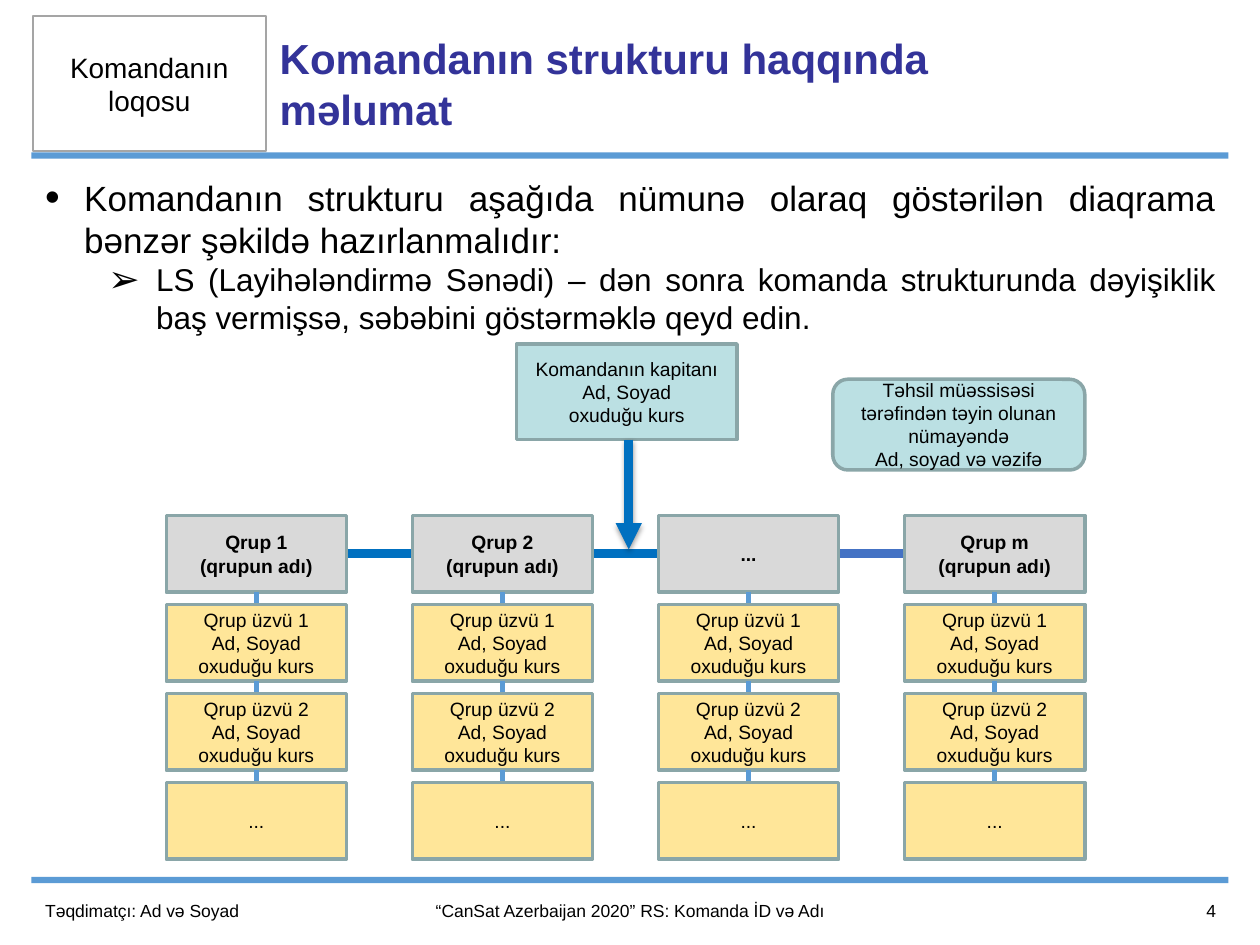
import dataclasses

import lxml.etree
import pptx
import pptx.dml.color
import pptx.enum.shapes
import pptx.enum.text
import pptx.oxml.ns
import pptx.util

# The slide is a grid of 100 columns by 75 rows
COLUMNS, ROWS, CELL = 100, 75, pptx.util.Inches(0.1)

ALIGN = pptx.enum.text.PP_ALIGN
ANCHOR = pptx.enum.text.MSO_ANCHOR
PRESET = pptx.enum.shapes.MSO_SHAPE

BLACK, WHITE, RULE_BLUE = "000000", "FFFFFF", "5B9BD5"
TITLE_BLUE, ARROW_BLUE, LAST_LINK_BLUE = "333399", "0070C0", "4472C4"
LEADER_FILL, GROUP_FILL, MEMBER_FILL = "BBE0E3", "D9D9D9", "FFE699"
CARD_EDGE, LOGO_EDGE = "8AA6A8", "A5A5A5"

NAME_LINES = ["Ad, Soyad", "oxuduğu kurs"]
MEMBERS = [["Qrup üzvü 1", *NAME_LINES], ["Qrup üzvü 2", *NAME_LINES], ["..."]]
GROUPS = [["Qrup 1", "(qrupun adı)"], ["Qrup 2", "(qrupun adı)"], ["..."],
          ["Qrup m", "(qrupun adı)"]]


@dataclasses.dataclass
class Box:
    left: float
    top: float
    width: float
    height: float

    def inner(self, left, top, width, height):
        return Box(self.left + left, self.top + top, width, height)

    def lengths(self):
        return [cells(v) for v in (self.left, self.top, self.width, self.height)]


def cells(count):
    return int(count * CELL)


def color(hex_string):
    return pptx.dml.color.RGBColor.from_string(hex_string)


def apply_format(target, values):
    for name, value in values.items():
        setattr(target, name, value)


def add_xml(parent, tag, **attributes):
    return lxml.etree.SubElement(parent, pptx.oxml.ns.qn(tag), attributes)


def write(frame, lines, size, align=ALIGN.CENTER, bold=False, ink=BLACK):
    apply_format(frame, {"word_wrap": True, "vertical_anchor": ANCHOR.MIDDLE,
                         "auto_size": pptx.enum.text.MSO_AUTO_SIZE.NONE})
    frame.text = "\n".join(lines)
    for paragraph in frame.paragraphs:
        paragraph.alignment = align
        apply_format(paragraph.font, {"name": "Arial", "size": pptx.util.Pt(size),
                                      "bold": bold})
        paragraph.font.color.rgb = color(ink)


def add_panel(slide, box, fill, edge=None, edge_width=2, preset=PRESET.RECTANGLE):
    panel = slide.shapes.add_shape(preset, *box.lengths())
    panel.shadow.inherit = False
    panel.fill.solid()
    panel.fill.fore_color.rgb = color(fill)
    if edge:
        panel.line.color.rgb = color(edge)
        panel.line.width = pptx.util.Pt(edge_width)
    else:
        panel.line.fill.background()
    return panel


def add_card(slide, box, lines, fill, bold=False, preset=PRESET.RECTANGLE):
    card = add_panel(slide, box, fill, CARD_EDGE, preset=preset)
    write(card.text_frame, lines, 11, bold=bold)


def add_label(slide, box, text, align):
    label = slide.shapes.add_textbox(*box.lengths())
    write(label.text_frame, [text], 10, align)


def add_link(slide, start, end, ink, width):
    link = slide.shapes.add_connector(pptx.enum.shapes.MSO_CONNECTOR.STRAIGHT,
                                      *(cells(v) for v in (*start, *end)))
    link.line.color.rgb = color(ink)
    link.line.width = pptx.util.Pt(width)
    effects = add_xml(link._element.spPr, "a:effectLst")
    return link, effects


def build_header(slide, box):
    # Rule and placeholder for the team logo
    add_panel(slide, box.inner(0, 10.8, box.width, 0.5), RULE_BLUE)
    logo = add_panel(slide, box.inner(0.1, 0, 18.5, 10.7), WHITE, LOGO_EDGE, 1)
    write(logo.text_frame, ["Komandanın loqosu"], 16)
    # Title
    title = slide.shapes.title
    places = box.inner(18.7, 0, 60, 10.6).lengths()
    apply_format(title, dict(zip(("left", "top", "width", "height"), places)))
    write(title.text_frame, ["Komandanın strukturu haqqında məlumat"], 24,
          ALIGN.LEFT, True, TITLE_BLUE)


def build_instructions(slide, box):
    points = [
        ("Komandanın strukturu aşağıda nümunə olaraq göstərilən diaqrama bənzər "
         "şəkildə hazırlanmalıdır:", 20, 0, "•", 0.31, 0.31),
        ("LS (Layihələndirmə Sənədi) – dən sonra komanda strukturunda dəyişiklik "
         "baş vermişsə, səbəbini göstərməklə qeyd edin.", 18, 1, "➢", 0.88, 0.38),
    ]
    frame = slide.shapes.add_textbox(*box.lengths()).text_frame
    write(frame, [point[0] for point in points], 20, ALIGN.JUSTIFY)
    frame.vertical_anchor = ANCHOR.TOP
    for paragraph, (_, size, level, mark, margin, hang) in zip(frame.paragraphs, points):
        paragraph.level = level
        properties = paragraph._p.get_or_add_pPr()
        properties.set("marL", str(pptx.util.Inches(margin)))
        properties.set("indent", str(-pptx.util.Inches(hang)))
        bullet = [("a:buSzPct", {"val": "120000"}), ("a:buFont", {"typeface": "Arial"}),
                  ("a:buChar", {"char": mark})]
        for position, (tag, attributes) in enumerate(bullet):
            properties.insert(position, add_xml(properties, tag, **attributes))
        paragraph.font.size = pptx.util.Pt(size)


def build_leaders(slide, box):
    add_card(slide, box.inner(0, 0, 17.5, 7.6), ["Komandanın kapitanı", *NAME_LINES],
             LEADER_FILL)
    add_card(slide, box.inner(25.1, 2.8, 20, 7.2),
             ["Təhsil müəssisəsi tərəfindən təyin olunan nümayəndə",
              "Ad, soyad və vəzifə"], LEADER_FILL, preset=PRESET.ROUNDED_RECTANGLE)
    # Arrow from the captain to the groups
    center = box.left + 8.9
    arrow, effects = add_link(slide, (center, box.top + 7.6), (center, box.top + 16.3),
                              ARROW_BLUE, 5)
    add_xml(arrow.line._get_or_add_ln(), "a:tailEnd", type="triangle")
    shadow = add_xml(effects, "a:outerShdw", blurRad=str(pptx.util.Pt(3.1)),
                     dist=str(pptx.util.Pt(1.6)), dir="5400000", rotWithShape="0")
    add_xml(add_xml(shadow, "a:srgbClr", val=BLACK), "a:alpha", val="38000")


def build_groups(slide, box):
    card_width, card_height = 14.3, 6.1
    column_step = (box.width - card_width) / (len(GROUPS) - 1)
    row_step = (box.height - card_height) / len(MEMBERS)
    # Links between neighbouring groups
    middle = box.top + card_height / 2
    for column, ink in enumerate([ARROW_BLUE, ARROW_BLUE, LAST_LINK_BLUE]):
        left = box.left + column * column_step
        add_link(slide, (left + card_width, middle), (left + column_step, middle), ink, 5)
    # One column of cards for each group, joined downwards
    for column, group in enumerate(GROUPS):
        left = column * column_step
        center = box.left + left + card_width / 2
        for row, lines in enumerate([group, *MEMBERS]):
            top = row * row_step
            if row:
                join = box.top + top
                add_link(slide, (center, join - row_step + card_height), (center, join),
                         RULE_BLUE, 3)
            add_card(slide, box.inner(left, top, card_width, card_height), lines,
                     MEMBER_FILL if row else GROUP_FILL, bold=row == 0)


def build_footer(slide, box):
    add_panel(slide, box.inner(0, 0, box.width, 0.5), RULE_BLUE)
    for left, width, text, align in [
        (0.1, 23.9, "Təqdimatçı: Ad və Soyad", ALIGN.LEFT),
        (24, 47, "“CanSat Azerbaijan 2020” RS: Komanda İD və Adı", ALIGN.CENTER),
        (85, 10, "4", ALIGN.RIGHT),
    ]:
        add_label(slide, box.inner(left, 0.7, width, 4), text, align)


def main():
    deck = pptx.Presentation()
    apply_format(deck, {"slide_width": cells(COLUMNS), "slide_height": cells(ROWS)})
    slide = deck.slides.add_slide(deck.slide_layouts.get_by_name("Title Only"))
    build_header(slide, Box(2.5, 1.3, 95, 11.3))
    build_instructions(slide, Box(2.6, 13.5, 94.9, 13.8))
    build_groups(slide, Box(13.2, 40.9, 72.9, 27.3))
    build_leaders(slide, Box(41, 27.3, 45.1, 10))
    build_footer(slide, Box(2.5, 69.6, 95, 4.7))
    deck.save("out.pptx")


if __name__ == "__main__":
    main()
